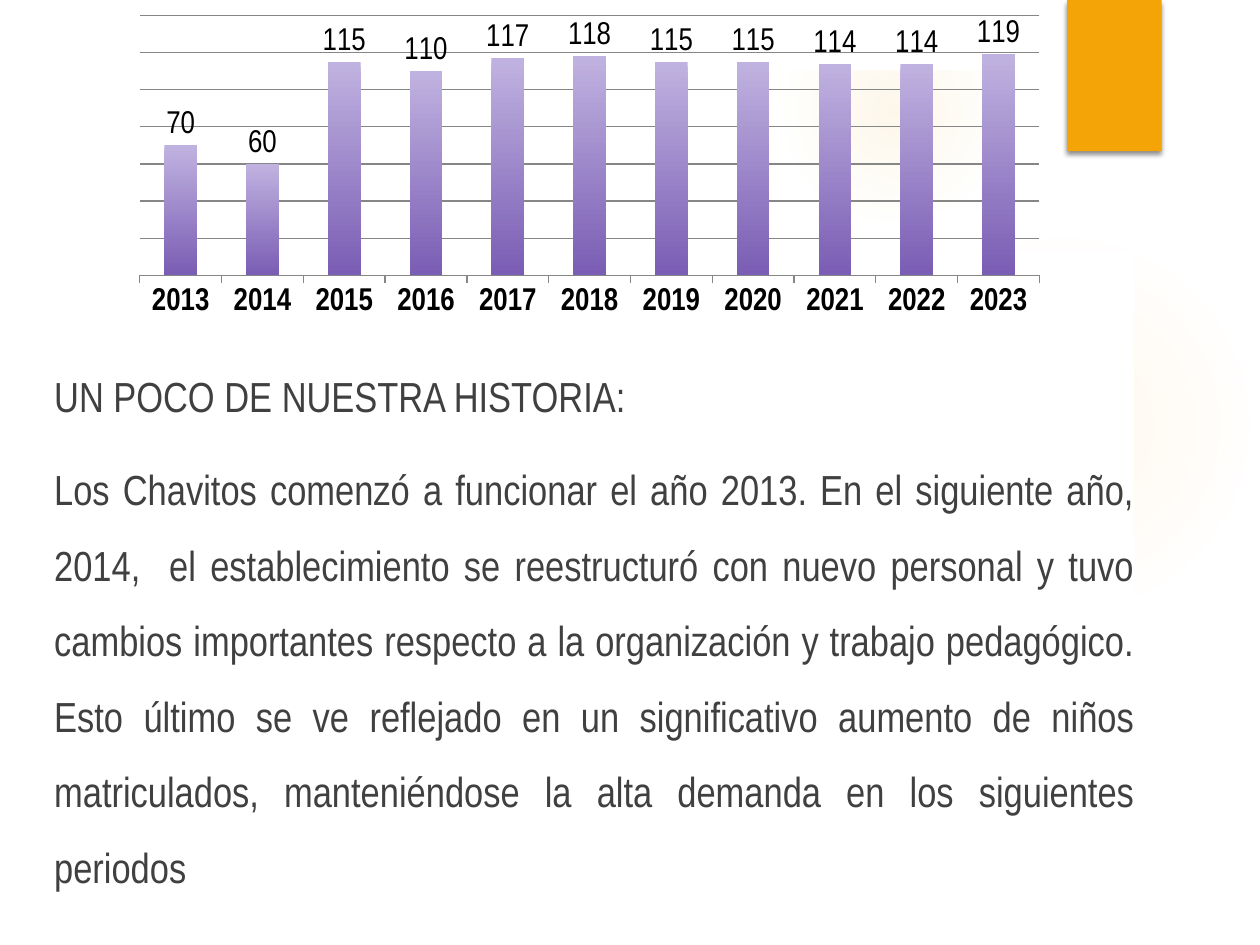
import pptx
import pptx.chart.data
import pptx.dml.color
import pptx.enum.chart
import pptx.enum.shapes
import pptx.enum.text
import pptx.oxml
import pptx.oxml.ns
import pptx.util

RGB = pptx.dml.color.RGBColor
WHITE = RGB(0xFF, 0xFF, 0xFF)
BLACK = RGB(0x00, 0x00, 0x00)
GREY = RGB(0x86, 0x86, 0x86)
TEXT = RGB(0x40, 0x40, 0x40)
ORANGE = RGB(0xF5, 0xA4, 0x08)
GLOW = RGB(0xFA, 0xC9, 0x6A)
LILAC = RGB(0xC0, 0xB2, 0xE0)
PURPLE = RGB(0x7A, 0x5D, 0xB4)

FONT = "Arial Narrow"
WIDTH, HEIGHT = 10, 7.5
SHAPES = pptx.enum.shapes.MSO_SHAPE
NS = pptx.oxml.ns.nsdecls("a", "c")

ENROLMENT = {
    2013: 70, 2014: 60, 2015: 115, 2016: 110, 2017: 117, 2018: 118,
    2019: 115, 2020: 115, 2021: 114, 2022: 114, 2023: 119,
}
HISTORY = (
    "UN POCO DE NUESTRA HISTORIA:",
    "Los Chavitos comenzó a funcionar el año 2013. En el siguiente año, 2014,  "
    "el establecimiento se reestructuró con nuevo personal y tuvo cambios "
    "importantes respecto a la organización y trabajo pedagógico. Esto último "
    "se ve reflejado en un significativo aumento de niños matriculados, "
    "manteniéndose la alta demanda en los siguientes periodos",
)
# Upper edge of the white panel, right to left, in inches
PANEL_EDGE = ((9.47, 2.03), (8.66, 2.14), (7.85, 2.23), (7.04, 2.29),
              (6.25, 2.33), (5.48, 2.34), (4.39, 2.33), (3.38, 2.29),
              (2.49, 2.24), (1.73, 2.17), (0.99, 2.09), (0.53, 2.03))


def inches(box):
    return [pptx.util.Inches(length) for length in box]


def add_plain(page, kind, box, color):
    shape = page.shapes.add_shape(kind, *inches(box))
    shape.shadow.inherit = False
    shape.fill.solid()
    shape.fill.fore_color.rgb = color
    shape.line.fill.background()
    return shape


def add_glow(page, box, stops):
    """Ellipse fading outwards; stops are (position, opacity) in percent."""
    glow = add_plain(page, SHAPES.OVAL, box, GLOW)
    marks = "".join(
        f'<a:gs pos="{pos * 1000}"><a:srgbClr val="{GLOW}">'
        f'<a:alpha val="{alpha * 1000}"/></a:srgbClr></a:gs>'
        for pos, alpha in stops)
    gradient = pptx.oxml.parse_xml(
        f'<a:gradFill {NS}><a:gsLst>{marks}</a:gsLst><a:path path="circle">'
        '<a:fillToRect l="50000" t="50000" r="50000" b="50000"/>'
        '</a:path></a:gradFill>')
    solid = glow._element.spPr.find(pptx.oxml.ns.qn("a:solidFill"))
    solid.getparent().replace(solid, gradient)


def add_backdrop(page):
    add_glow(page, (6.89, 1.83, 3.08, 3.08), ((0, 7), (36, 6), (69, 0)))
    add_glow(page, (6.22, 0.01, 1.75, 1.75), ((0, 14), (36, 7), (73, 0)))
    builder = page.shapes.build_freeform(*PANEL_EDGE[0], scale=pptx.util.Inches(1))
    builder.add_line_segments(PANEL_EDGE[1:] + ((0.53, 6.99), (9.47, 6.99)))
    panel = builder.convert_to_shape()
    panel.shadow.inherit = False
    panel.fill.solid()
    panel.fill.fore_color.rgb = WHITE
    panel.line.fill.background()
    add_plain(page, SHAPES.RECTANGLE, (0, 0, WIDTH, 0.56), WHITE)


def add_tab(page, box):
    tab = add_plain(page, SHAPES.RECTANGLE, box, ORANGE)
    effects = tab._element.spPr.find(pptx.oxml.ns.qn("a:effectLst"))
    effects.append(pptx.oxml.parse_xml(
        f'<a:outerShdw {NS} blurRad="38100" dist="25400" dir="5400000" '
        'rotWithShape="0"><a:srgbClr val="000000"><a:alpha val="45000"/>'
        '</a:srgbClr></a:outerShdw>'))


def format_font(font, size=18, color=BLACK, bold=False):
    font.name = FONT
    font.size = pptx.util.Pt(size)
    font.bold = bold
    font.color.rgb = color


def add_text(frame, text, first=False, size=24, color=TEXT, before=10):
    para = frame.paragraphs[0] if first else frame.add_paragraph()
    para.alignment = pptx.enum.text.PP_ALIGN.JUSTIFY
    para.line_spacing = 1.5
    para.space_before = pptx.util.Pt(0 if first else before)
    props = para._p.get_or_add_pPr()
    props.set("marL", str(pptx.util.Inches(0.05)))
    props.set("indent", "0")
    props.append(pptx.oxml.parse_xml(f"<a:buNone {NS}/>"))
    span = para.add_run()
    span.text = text
    format_font(span.font, size, color)


def fill_history(page, box):
    body = page.placeholders[1]
    body.left, body.top, body.width, body.height = inches(box)
    page.shapes._spTree.append(body._element)  # in front of the backdrop
    frame = body.text_frame
    frame.word_wrap = True
    frame.auto_size = pptx.enum.text.MSO_AUTO_SIZE.NONE
    frame.vertical_anchor = pptx.enum.text.MSO_ANCHOR.TOP
    for index, text in enumerate(HISTORY):
        add_text(frame, text, first=index == 0)


def place_plot(chart, **shares):
    """Fix the inner plot area as shares of the chart's size."""
    area = chart._chartSpace.chart.plotArea
    for old in area.findall(pptx.oxml.ns.qn("c:layout")):
        area.remove(old)
    sizes = "".join(f'<c:{key} val="{share}"/>' for key, share in shares.items())
    area.insert(0, pptx.oxml.parse_xml(
        f'<c:layout {NS}><c:manualLayout><c:layoutTarget val="inner"/>'
        f'<c:xMode val="edge"/><c:yMode val="edge"/>{sizes}'
        '</c:manualLayout></c:layout>'))


def add_enrolment_chart(page, box):
    kinds = pptx.enum.chart
    data = pptx.chart.data.CategoryChartData()
    data.categories = [str(year) for year in ENROLMENT]
    data.add_series("Series 1", ENROLMENT.values())
    chart = page.shapes.add_chart(
        kinds.XL_CHART_TYPE.COLUMN_CLUSTERED, *inches(box), data).chart
    chart.has_legend = chart.has_title = False
    format_font(chart.font)
    place_plot(chart, x=0.08, y=0.11, w=0.84, h=0.73)

    values = chart.value_axis
    values.visible = False
    values.minimum_scale, values.maximum_scale, values.major_unit = 0, 140, 20
    values.has_major_gridlines = True
    years = chart.category_axis
    years.major_tick_mark = kinds.XL_TICK_MARK.OUTSIDE
    format_font(years.tick_labels.font, bold=True)
    for line in (values.major_gridlines.format.line, years.format.line):
        line.color.rgb = GREY
        line.width = pptx.util.Pt(0.75)

    plot = chart.plots[0]
    plot.gap_width = 150
    plot.vary_by_categories = False
    bars = plot.series[0]
    fill = bars.format.fill
    fill.gradient()
    fill.gradient_angle = 270
    for stop, color, position in zip(fill.gradient_stops, (LILAC, PURPLE), (0, 1)):
        stop.color.rgb = color
        stop.position = position
    labels = bars.data_labels
    labels.show_value = True
    labels.position = kinds.XL_LABEL_POSITION.OUTSIDE_END
    format_font(labels.font)


def main():
    deck = pptx.Presentation()
    deck.slide_width, deck.slide_height = inches((WIDTH, HEIGHT))
    page = deck.slides.add_slide(deck.slide_layouts[1])
    title = page.shapes.title._element
    title.getparent().remove(title)
    add_backdrop(page)
    add_tab(page, (8.47, 0, 0.75, 1.2))
    fill_history(page, (0.28, 2.69, 8.82, 4.33))
    add_enrolment_chart(page, (0.43, -0.19, 8.5, 2.83))
    deck.save("out.pptx")


if __name__ == "__main__":
    main()
